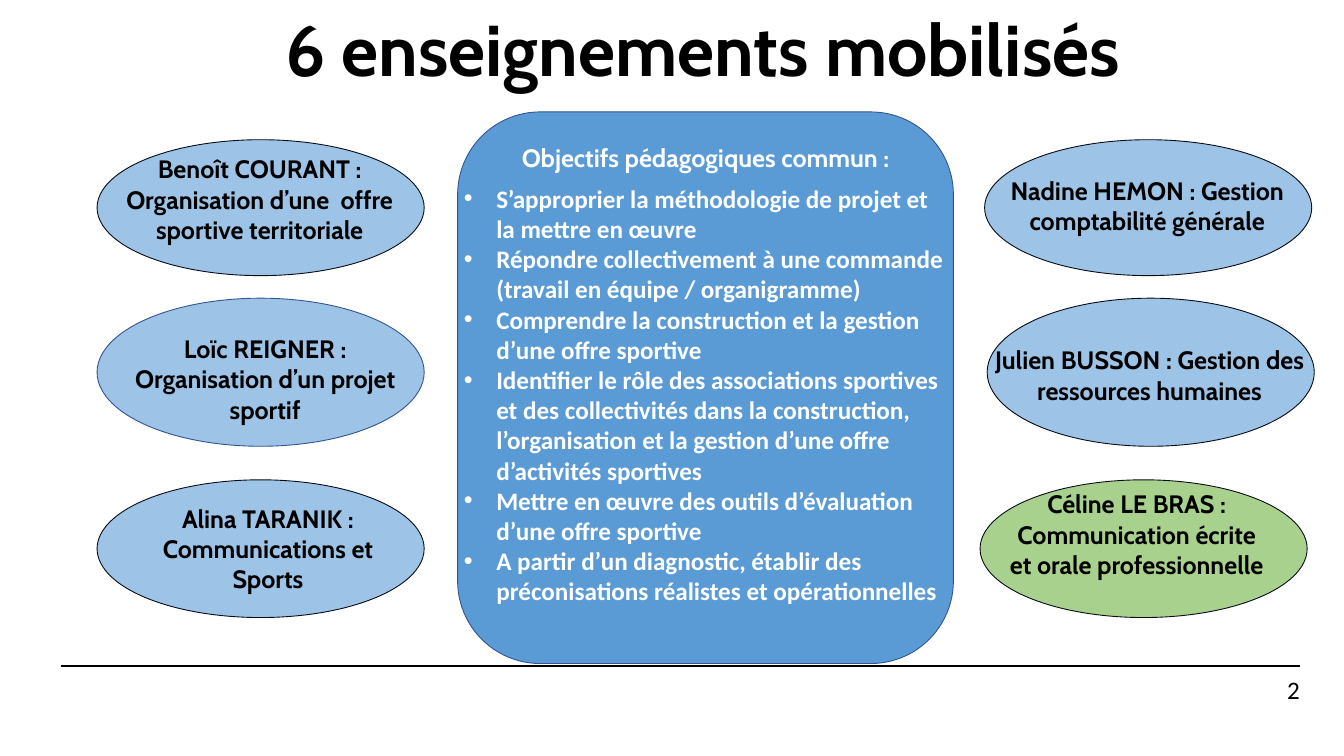
from dataclasses import dataclass

from lxml import etree
from pptx import Presentation
from pptx.dml.color import RGBColor
from pptx.enum.shapes import MSO_CONNECTOR, MSO_SHAPE
from pptx.enum.text import MSO_ANCHOR, MSO_AUTO_SIZE, PP_ALIGN
from pptx.oxml.ns import qn
from pptx.util import Inches, Pt

LINE = MSO_CONNECTOR.STRAIGHT
OVAL, ROUND = MSO_SHAPE.OVAL, MSO_SHAPE.ROUNDED_RECTANGLE
LEFT, MID, RIGHT = PP_ALIGN.LEFT, PP_ALIGN.CENTER, PP_ALIGN.RIGHT
GROW = {"auto_size": MSO_AUTO_SIZE.SHAPE_TO_FIT_TEXT}
FLUSH = {"margin_left": 0, "margin_right": 0, "margin_top": 0,
         "margin_bottom": 0, "vertical_anchor": MSO_ANCHOR.MIDDLE}


@dataclass(frozen=True)
class Theme:
    black: str = "000000"
    white: str = "FFFFFF"
    sky: str = "9DC3E6"
    green: str = "A9D18E"
    blue: str = "5B9BD5"
    edge: str = "060B14"
    navy: str = "325491"
    head: str = "Cabin"
    body: str = "Calibri"
    big: int = 80
    text: int = 28


def assign(item, form):
    for key, val in form.items():
        setattr(item, key, val)


class Deck:
    """Places elements by percent of the slide's width and height."""

    def __init__(self, wide, high):
        self.look = Theme()
        self.file = Presentation()
        assign(self.file, {"slide_width": Inches(wide),
                           "slide_height": Inches(high)})
        self.page = self.file.slides.add_slide(self.file.slide_layouts[6])

    def place(self, *box):
        sides = (self.file.slide_width, self.file.slide_height) * 2
        return [round(side * part / 100) for side, part in zip(sides, box)]

    def rule(self, *ends):
        line = self.page.shapes.add_connector(LINE, *self.place(*ends))
        line.line.color.rgb = RGBColor.from_string(self.look.black)
        line.line.width = Pt(2)
        etree.SubElement(line._element.spPr, qn("a:effectLst"))

    def shape(self, kind, box, fill, edge):
        item = self.page.shapes.add_shape(kind, *self.place(*box))
        item.shadow.inherit = False
        item.fill.solid()
        item.fill.fore_color.rgb = RGBColor.from_string(fill)
        item.line.color.rgb = RGBColor.from_string(edge)
        item.line.width = Pt(1)

    def frame(self, box, form):
        frame = self.page.shapes.add_textbox(*self.place(*box)).text_frame
        assign(frame, {"word_wrap": True, **form})
        return frame

    def phrase(self, para, words, align=MID, form=None, **font):
        assign(para, {"alignment": align, **(form or {})})
        run = para.add_run()
        run.text = words
        color = font.pop("color", self.look.black)
        assign(run.font, {"name": self.look.head, "bold": True,
                          "size": Pt(self.look.text), **font})
        run.font.color.rgb = RGBColor.from_string(color)

    def label(self, box, words, align=MID, frame=GROW, form=None, **font):
        para = self.frame(box, frame).paragraphs[0]
        self.phrase(para, words, align, form, **font)

    def bullet(self, frame, words, **font):
        para = frame.add_paragraph()
        self.phrase(para, words, LEFT, **font)
        props = para._p.get_or_add_pPr()
        props.set("marL", str(Inches(0.5)))
        props.set("indent", str(-Inches(0.5)))
        etree.SubElement(props, qn("a:buFont"), typeface="Arial")
        etree.SubElement(props, qn("a:buChar"), char="•")


# Row tops and heights of the ovals
ROWS = [(18.48, 17.98), (39.44, 19.59), (63.47, 18.22)]
WIDE = 24.34

# Row, oval left, text box, wording
STAFF = [
    (0, 7.22, (8.47, 19.93, 21.69, 12.92),
     "Benoît COURANT : Organisation d’une  offre sportive territoriale"),
    (1, 7.22, (7.94, 43.71, 23.57, 12.92),
     "Loïc REIGNER : Organisation d’un projet sportif"),
    (2, 7.22, (10.34, 66.12, 19.19, 12.92),
     "Alina TARANIK : Communications et Sports"),
    (0, 73.26, (74.27, 22.75, 22.17, 8.9),
     "Nadine HEMON : Gestion comptabilité générale"),
    (1, 73.45, (73.45, 45.17, 24.15, 8.9),
     "Julien BUSSON : Gestion des ressources humaines"),
    (2, 72.92, (74.56, 64.24, 20.01, 17.02),
     "Céline LE BRAS : Communication écrite et orale professionnelle"),
]

GOALS = [
    "S’approprier la méthodologie de projet et la mettre en œuvre",
    "Répondre collectivement à une commande (travail en équipe / organigramme)",
    "Comprendre la construction et la gestion d’une offre sportive",
    "Identifier le rôle des associations sportives et des collectivités dans "
    "la construction, l’organisation et la gestion d’une offre d’activités "
    "sportives",
    "Mettre en œuvre des outils d’évaluation d’une offre sportive",
    "A partir d’un diagnostic, établir des préconisations réalistes et "
    "opérationnelles",
]


def main():
    deck = Deck(20.79, 11.69)
    look = deck.look

    # Footer line and page number
    deck.rule(4.52, 88.11, 96.73, 88.11)
    deck.label((85.71, 89.22, 11.01, 4.02), "2", RIGHT, {**GROW, **FLUSH},
               name=look.body, bold=False)

    # Title
    deck.label((4.76, 1.45, 95.05, 12.92), "6 enseignements mobilisés",
               frame={}, form={"line_spacing": 0.9}, size=Pt(look.big))

    # Teachers on both sides
    for row, left, box, words in STAFF:
        top, high = ROWS[row]
        fill = look.green if words.startswith("Céline") else look.sky
        edge = look.navy if words.startswith("Loïc") else look.edge
        deck.shape(OVAL, (left, top, WIDE, high), fill, edge)
        deck.label(box, words)

    # Shared goals in the middle
    deck.shape(ROUND, (34.05, 14.8, 36.89, 72.97), look.blue, look.navy)
    goals = deck.frame((34.05, 18.39, 36.89, 66.81), GROW)
    deck.phrase(goals.paragraphs[0], "Objectifs pédagogiques commun :",
                form={"space_after": Pt(12)}, color=look.white)
    for words in GOALS:
        deck.bullet(goals, words, name=look.body, color=look.white)

    deck.file.save("out.pptx")


if __name__ == "__main__":
    main()
